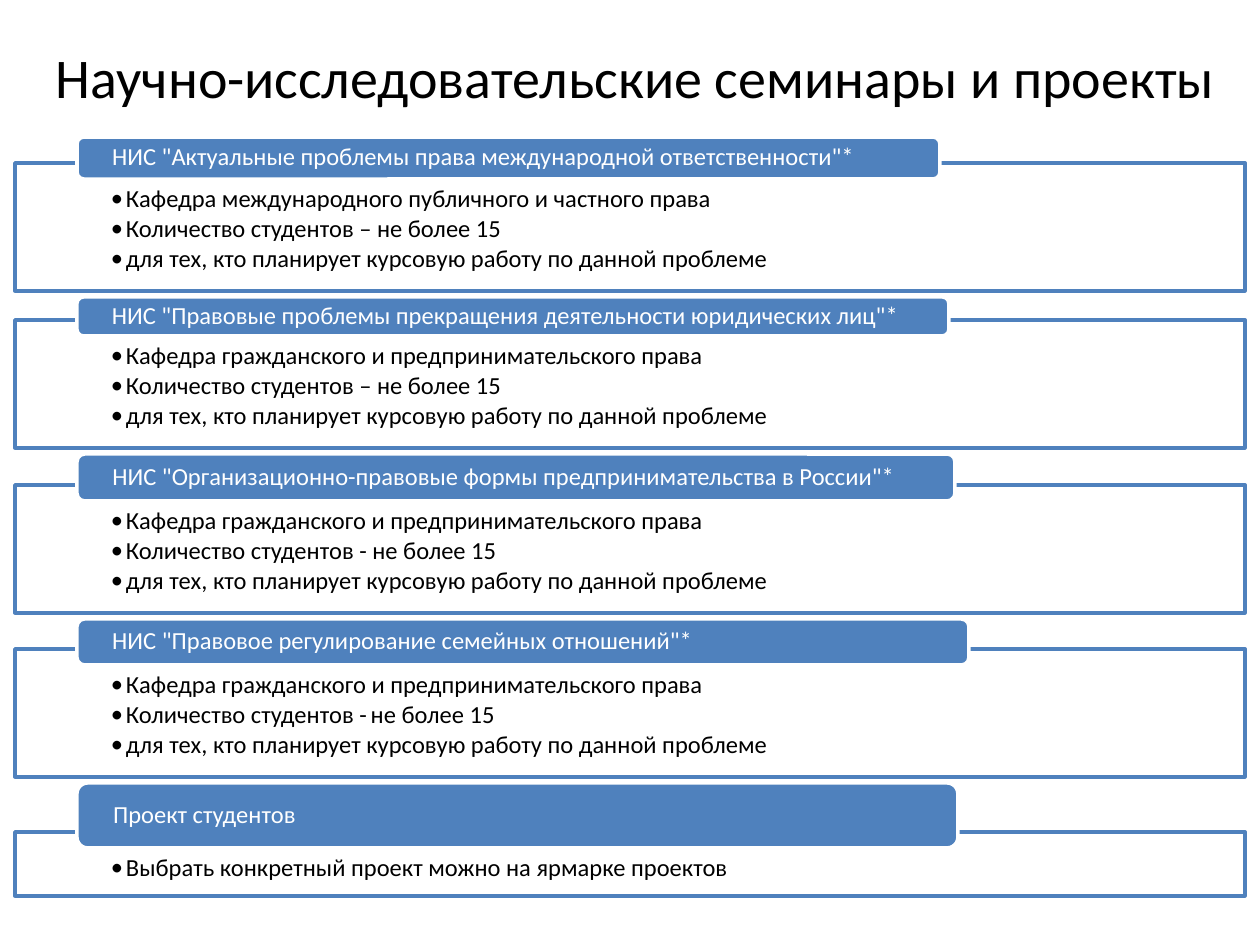
from dataclasses import dataclass

from lxml.etree import SubElement
from pptx import Presentation
from pptx.dml.color import RGBColor
from pptx.enum.shapes import MSO_SHAPE as Shape
from pptx.enum.text import MSO_ANCHOR as Anchor, PP_ALIGN as Align
from pptx.oxml.ns import qn
from pptx.util import Emu, Pt


@dataclass(frozen=True)
class Theme:
    font: str = "Calibri"
    accent: RGBColor = RGBColor(0x4F, 0x81, 0xBD)
    paper: RGBColor = RGBColor(0xFF, 0xFF, 0xFF)
    ink: RGBColor = RGBColor(0x00, 0x00, 0x00)
    title: int = 32
    body: int = 14
    small: int = 9
    outline: int = 2


THEME = Theme()
PANEL_HEIGHT, LAST_PANEL_HEIGHT = 128, 64
OVERLAP, GAP = 16, 6

CIVIL = "Кафедра гражданского и предпринимательского права"
COURSEWORK = "для тех, кто планирует курсовую работу по данной проблеме"
LIMIT_DASH = "Количество студентов – не более 15"
LIMIT_HYPHEN = "Количество студентов - не более 15"
LIMIT_NARROW = [("Количество студентов -", THEME.body), (" ", THEME.small), ("не более 15", THEME.body)]

SECTIONS = [
    ('НИС "Актуальные проблемы права международной ответственности"*', 863, 42, PANEL_HEIGHT,
     ["Кафедра международного публичного и частного права", LIMIT_DASH, COURSEWORK]),
    ('НИС "Правовые проблемы прекращения деятельности юридических лиц"*', 872, 39, PANEL_HEIGHT,
     [CIVIL, LIMIT_DASH, COURSEWORK]),
    ('НИС "Организационно-правовые формы предпринимательства в России"*', 878, 47, PANEL_HEIGHT,
     [CIVIL, LIMIT_HYPHEN, COURSEWORK]),
    ('НИС "Правовое регулирование семейных отношений"*', 892, 46, PANEL_HEIGHT,
     [CIVIL, LIMIT_NARROW, COURSEWORK]),
    ("Проект студентов", 881, 65, LAST_PANEL_HEIGHT,
     ["Выбрать конкретный проект можно на ярмарке проектов"]),
]


def px(length):
    return Emu(round(length * 914400 / 126))


def add_span(para, text, size, color):
    span = para.add_run()
    span.text = text
    span.font.name = THEME.font
    span.font.size = Pt(size)
    span.font.color.rgb = color


def set_frame(frame, anchor, insets):
    frame.word_wrap = True
    frame.vertical_anchor = anchor
    frame.margin_left, frame.margin_top, frame.margin_right, frame.margin_bottom = map(px, insets)


def add_block(page, kind, box, fill, line):
    block = page.shapes.add_shape(kind, *map(px, box))
    block.shadow.inherit = False
    block.fill.solid()
    block.fill.fore_color.rgb = fill
    block.line.color.rgb = line
    block.line.width = Pt(THEME.outline)
    return block


def add_bullet(para):
    para.level = 1
    para.alignment = Align.LEFT
    para.line_spacing = 0.9
    para.space_after = Pt(0.15 * THEME.body)
    properties = para._p.get_or_add_pPr()
    properties.set("marL", str(px(15)))
    properties.set("indent", str(px(-15)))
    SubElement(properties, qn("a:buFont")).set("typeface", THEME.font)
    SubElement(properties, qn("a:buChar")).set("char", "•")


def add_panel(page, box, items):
    panel = add_block(page, Shape.RECTANGLE, box, THEME.paper, THEME.accent)
    color = panel.fill._xPr.find(".//" + qn("a:srgbClr"))
    SubElement(color, qn("a:alpha")).set("val", "90000")
    frame = panel.text_frame
    set_frame(frame, Anchor.TOP, (96, 23, 96, 14))
    for index, item in enumerate(items):
        para = frame.add_paragraph() if index else frame.paragraphs[0]
        add_bullet(para)
        for text, size in [(item, THEME.body)] if isinstance(item, str) else item:
            add_span(para, text, size, THEME.ink)


def add_tab(page, box, heading):
    tab = add_block(page, Shape.ROUNDED_RECTANGLE, box, THEME.accent, THEME.paper)
    set_frame(tab.text_frame, Anchor.MIDDLE, (33, 0, 33, 0))
    para = tab.text_frame.paragraphs[0]
    para.alignment = Align.LEFT
    para.line_spacing = 0.9
    add_span(para, heading, THEME.body, THEME.paper)


def add_section(page, box, heading, tab_width, tab_height, items):
    left, top, width, height = box
    drop = tab_height - OVERLAP
    add_panel(page, (left, top + drop, width, height - drop), items)
    add_tab(page, (left + 62, top, tab_width, tab_height), heading)


def add_sections(page, box):
    left, top, width = box
    for heading, tab_width, tab_height, panel_height, items in SECTIONS:
        height = tab_height - OVERLAP + panel_height
        add_section(page, (left, top, width, height), heading, tab_width, tab_height, items)
        top += height + GAP


def add_title(page, box, text):
    title = page.shapes.add_textbox(*map(px, box))
    set_frame(title.text_frame, Anchor.MIDDLE, (13, 6, 13, 6))
    para = title.text_frame.paragraphs[0]
    para.alignment = Align.CENTER
    add_span(para, text, THEME.title, THEME.ink)


def main():
    deck = Presentation()
    deck.slide_width, deck.slide_height = px(1260), px(945)
    page = deck.slides.add_slide(deck.slide_layouts[6])
    add_title(page, (25, 38, 1221, 77), "Научно-исследовательские семинары и проекты")
    add_sections(page, (15, 137, 1230))
    deck.save("out.pptx")


if __name__ == "__main__":
    main()
